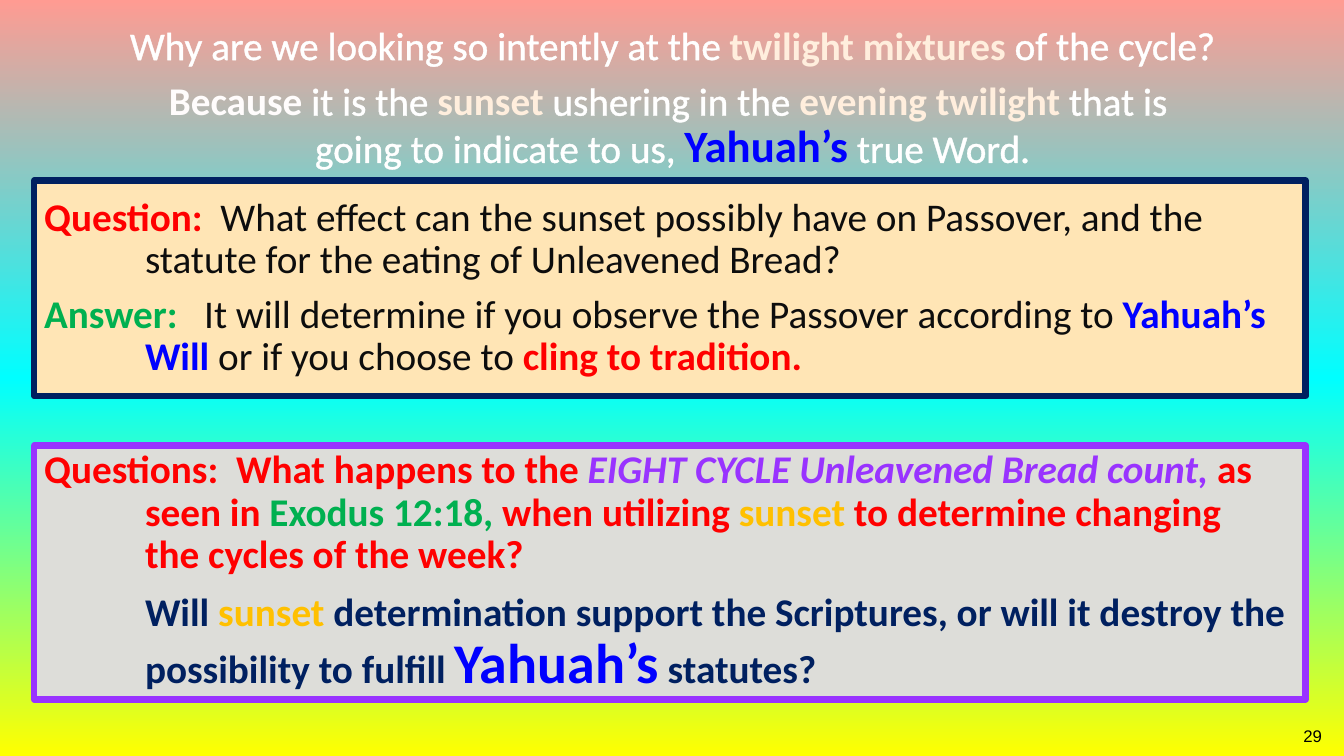
"""Build the slide about sunset, Passover and Unleavened Bread."""
from lxml.etree import SubElement
from pptx import Presentation
from pptx.dml.color import RGBColor as RGB
from pptx.enum.shapes import MSO_SHAPE as SHAPE
from pptx.enum.text import MSO_ANCHOR as ANCHOR, MSO_AUTO_SIZE as AUTO, PP_ALIGN as ALIGN
from pptx.oxml.ns import qn
from pptx.util import Inches, Pt

WHITE = RGB(0xFF, 0xFF, 0xFF)
SNOW = RGB(0xFF, 0xFC, 0xFC)
PALE_GREY = RGB(0xF2, 0xF2, 0xF2)
BLACK = RGB(0x00, 0x00, 0x00)
INK = RGB(0x0D, 0x0D, 0x0D)
RED = RGB(0xFF, 0x00, 0x00)
GREEN = RGB(0x00, 0xB0, 0x50)
BLUE = RGB(0x00, 0x00, 0xFF)
NAVY = RGB(0x00, 0x20, 0x60)
PURPLE = RGB(0x99, 0x33, 0xFF)
GOLD = RGB(0xFF, 0xC0, 0x00)
ORANGE = RGB(0xFF, 0xB5, 0x31)
EMBER = RGB(0xFF, 0x3F, 0x0B)
SAND = RGB(0xFF, 0xE5, 0xB5)
STONE = RGB(0xDD, 0xDD, 0xD9)
SKY_STOPS = [(0, RGB(0xFF, 0x9B, 0x92)), (50, RGB(0x00, 0xFF, 0xFF)),
             (100, RGB(0xFF, 0xFF, 0x00))]
GLOW_STOPS = [(10, RGB(0xFF, 0xF9, 0xF4)), (60, RGB(0xFF, 0xEE, 0xDD)),
              (100, RGB(0xFF, 0xD2, 0x99))]

BASE = {"name": "Calibri", "size": Pt(28), "bold": False}
PLAIN = {"color": WHITE, "outline": (WHITE, 1.45)}
GLOW = {"stops": GLOW_STOPS, "outline": (ORANGE, 1.93), "bold": True}
BECAUSE = {"color": SNOW, "outline": (EMBER, 0.07), "bold": True}
NAME = {"color": BLUE, "outline": (PALE_GREY, 0.75), "bold": True}
BODY = {"color": INK}
SUNSET = {"color": GOLD, "outline": (BLACK, 0.75), "bold": True}
NUMBER = {"name": "Arial", "size": Pt(12), "color": BLACK}


def strong(color, **extra):
    """Return a bold format in one colour."""
    return {"color": color, "bold": True, **extra}


HEADING = [
    ({}, [("Why are we looking so intently at the ", PLAIN), ("twilight mixtures ", GLOW),
          ("of the cycle?", PLAIN)]),
    ({"space_before": Pt(9.5)}, [
        ("Because", BECAUSE), (" it is the ", PLAIN), ("sunset ", GLOW),
        ("ushering in the ", PLAIN), ("evening twilight ", GLOW),
        ("that is \ngoing to indicate to us, ", PLAIN),
        ("Yahuah’s", {**NAME, "size": Pt(32)}), (" ", BODY), ("true Word.", PLAIN)]),
]
PASSOVER = [
    ({}, [("Question:", strong(RED)), (" ", strong(RED, spread=6.3)),
          ("What effect can the sunset possibly have on Passover, and the statute "
           "for the eating of Unleavened Bread?", BODY)]),
    ({"space_before": Pt(8.4)}, [
        ("Answer:", strong(GREEN)), (" ", strong(GREEN, spread=12.6)),
        ("It will determine if you observe the Passover according to ", BODY),
        ("Yahuah’s Will ", strong(BLUE)), ("or if you choose to ", BODY),
        ("cling to tradition.", strong(RED))]),
]
BREAD_COUNT = [
    ({}, [("Questions:", strong(RED)), (" ", strong(RED, spread=6.3)),
          ("What happens to the ", strong(RED)),
          ("EIGHT CYCLE Unleavened Bread count, ", strong(PURPLE, italic=True)),
          ("as seen in ", strong(RED)), ("Exodus 12:18,", strong(GREEN)),
          (" when utilizing ", strong(RED)), ("sunset", SUNSET),
          (" to determine changing \nthe cycles of the week?", strong(RED))]),
    ({"space_before": Pt(11)}, [
        ("Will ", strong(NAVY)), ("sunset ", SUNSET),
        ("determination support the Scriptures, or will it destroy the possibility "
         "to fulfill ", strong(NAVY)),
        ("Yahuah’s", {**NAME, "size": Pt(40)}), (" statutes?", strong(NAVY))]),
]


def set_gradient(fill, owner, stops):
    """Fill from top to bottom with the given colour stops."""
    fill.gradient()
    fill.gradient_angle = 270
    stop_list = next(owner.iter(qn("a:gsLst")))
    for old_stop in list(stop_list):
        stop_list.remove(old_stop)
    for position, color in stops:
        stop = SubElement(stop_list, qn("a:gs"), pos=str(position * 1000))
        SubElement(stop, qn("a:srgbClr"), val=str(color))


def outline_text(properties, color, width):
    """Draw a coloured line round the letters."""
    line = SubElement(properties, qn("a:ln"), w=str(int(Pt(width))))
    SubElement(SubElement(line, qn("a:solidFill")), qn("a:srgbClr"), val=str(color))
    properties.insert(0, line)


def add_run(paragraph, words, style):
    """Add one formatted run."""
    run = paragraph.add_run()
    run.text = words
    properties = run._r.get_or_add_rPr()
    for key, value in {**BASE, **style}.items():
        if key == "color":
            run.font.color.rgb = value
        elif key == "stops":
            set_gradient(run.font.fill, properties, value)
        elif key == "spread":
            properties.set("spc", str(round(value * 100)))
        elif key != "outline":
            setattr(run.font, key, value)
    if "outline" in style:
        outline_text(properties, *style["outline"])


def write(frame, content, align, anchor):
    """Write the paragraphs into a text frame."""
    frame.word_wrap = True
    frame.auto_size = AUTO.NONE
    frame.vertical_anchor = anchor
    for index, (spacing, runs) in enumerate(content):
        paragraph = frame.add_paragraph() if index else frame.paragraphs[0]
        settings = {"alignment": align, "line_spacing": 0.9, "space_before": Pt(0), **spacing}
        for key, value in settings.items():
            setattr(paragraph, key, value)
        for text, style in runs:
            for part, words in enumerate(text.split("\n")):
                if part:
                    paragraph.add_line_break()
                add_run(paragraph, words, style)


def place(shape, left, top, width, height):
    """Set position and size in inches."""
    box = {"left": left, "top": top, "width": width, "height": height}
    for key, value in box.items():
        setattr(shape, key, Inches(value))


def add_panel(slide, top, height, fill, border, content):
    """Add a bordered panel with hanging paragraphs."""
    panel = slide.shapes.add_shape(SHAPE.RECTANGLE, Inches(0.34), Inches(top),
                                   Inches(12.61), Inches(height))
    panel.shadow.inherit = False
    panel.fill.solid()
    panel.fill.fore_color.rgb = fill
    panel.line.color.rgb = border
    panel.line.width = Pt(4.5)
    write(panel.text_frame, content, ALIGN.LEFT, ANCHOR.MIDDLE)
    for paragraph, (_, runs) in zip(panel.text_frame.paragraphs, content):
        labelled = runs[0][0].endswith(":")
        properties = paragraph._p.get_or_add_pPr()
        properties.set("marL", str(Inches(1)))
        properties.set("indent", str(Inches(-1 if labelled else 0)))


def main():
    """Build and save the slide."""
    deck = Presentation()
    deck.slide_width, deck.slide_height = Inches(13.33), Inches(7.5)
    slide = deck.slides.add_slide(deck.slide_layouts[5])
    set_gradient(slide.background.fill, slide.element, SKY_STOPS)

    heading = slide.shapes.title
    place(heading, 0.19, 0.21, 12.96, 1.55)
    write(heading.text_frame, HEADING, ALIGN.CENTER, ANCHOR.TOP)

    add_panel(slide, 1.79, 2.14, SAND, NAVY, PASSOVER)
    add_panel(slide, 4.42, 2.52, STONE, PURPLE, BREAD_COUNT)

    page_number = slide.shapes.add_textbox(0, 0, 0, 0)
    place(page_number, 9.63, 7.11, 3.58, 0.4)
    write(page_number.text_frame, [({}, [("29", NUMBER)])], ALIGN.RIGHT, ANCHOR.MIDDLE)
    deck.save("out.pptx")


if __name__ == "__main__":
    main()
